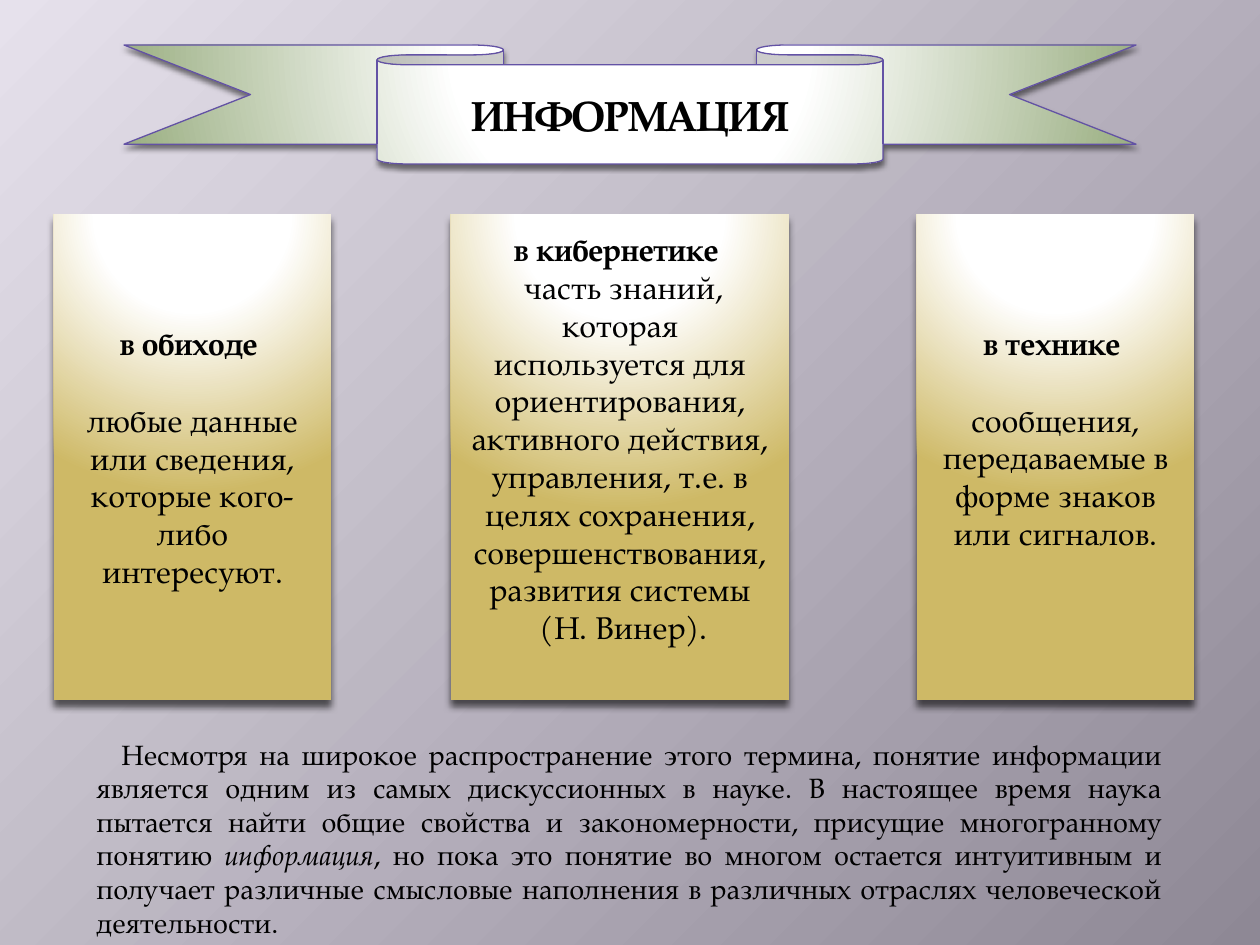
from lxml import etree
from pptx import Presentation
from pptx.dml.color import RGBColor
from pptx.enum.shapes import MSO_SHAPE
from pptx.enum.text import MSO_ANCHOR, PP_ALIGN
from pptx.oxml import parse_xml
from pptx.oxml.ns import nsdecls, qn
from pptx.util import Pt

RECT, RIBBON = MSO_SHAPE.RECTANGLE, MSO_SHAPE.DOWN_RIBBON
CENTER, JUSTIFY = PP_ALIGN.CENTER, PP_ALIGN.JUSTIFY
MIDDLE = MSO_ANCHOR.MIDDLE
PX = 914400 / 126
FONT = "TeX Gyre Pagella"
C = {"text": "000000", "white": "FFFFFF", "gold": "CEB966", "green": "9CB084",
     "line": "6352A5", "bg_light": "E6E1EC", "bg_dark": "8E8895"}


def px(*lengths):
    return [round(n * PX) for n in lengths]


def paint(fill, parent, stops, focus, shadow=None):
    fill.solid()
    gs = "".join(f'<a:gs pos="{pos * 1000}"><a:srgbClr val="{C[name]}"/></a:gs>'
                 for pos, name in stops)
    l, t, r, b = [n * 1000 for n in focus]
    solid = parent.find(qn("a:solidFill"))
    parent.replace(solid, parse_xml(
        f'<a:gradFill {nsdecls("a")} rotWithShape="1"><a:gsLst>{gs}</a:gsLst>'
        f'<a:path path="circle"><a:fillToRect l="{l}" t="{t}" r="{r}" b="{b}"/>'
        f'</a:path></a:gradFill>'))
    if shadow:
        alpha, blur, dist = shadow
        outer = etree.SubElement(parent.find(qn("a:effectLst")), qn("a:outerShdw"),
                                 blurRad=str(Pt(blur)), dist=str(Pt(dist)),
                                 dir="5400000", algn="ctr", rotWithShape="0")
        color = etree.SubElement(outer, qn("a:srgbClr"), val=C["text"])
        etree.SubElement(color, qn("a:alpha"), val=str(alpha * 1000))


prs = Presentation()
prs.slide_width, prs.slide_height = px(1260, 945)
s = prs.slides.add_slide(prs.slide_layouts[5])
bg = s.background.fill
bg.solid()
paint(bg, s._element.find(".//" + qn("p:bgPr")),
      [(0, "bg_light"), (100, "bg_dark")], (0, 0, 100, 100))

GLOW = (50, -80, 50, 180)
boxes = [
    (54, 277, 6, 22, ["в обиходе ",
                      "любые данные или сведения, которые кого-либо интересуют."]),
    (917, 277, 44, 22, ["в технике ",
                        "сообщения, передаваемые в форме знаков или сигналов."]),
    (451, 338, 44, 0, ["в кибернетике ",
                       " часть знаний, которая используется для ориентирования, "
                       "активного действия, управления, т.е. в целях сохранения, "
                       "совершенствования, развития системы",
                       " (Н. Винер)."]),
]
for left, width, bottom, gap, lines in boxes:
    sp = s.shapes.add_shape(RECT, *px(left, 214, width, 486))
    sp.shadow.inherit = False
    paint(sp.fill, sp._element.spPr,
          [(0, "white"), (35, "white"), (100, "gold")], GLOW, (60, 4, 4))
    sp.line.fill.background()
    tf = sp.text_frame
    tf.word_wrap = True
    tf.vertical_anchor = MIDDLE
    tf.margin_bottom = px(bottom)[0]
    for i, line in enumerate(lines):
        p = tf.paragraphs[0] if i == 0 else tf.add_paragraph()
        p.text = line
        p.alignment = CENTER
        p.font.name, p.font.size, p.font.bold = FONT, Pt(18), i == 0
        p.font.color.rgb = RGBColor.from_string(C["text"])
        if i == 0:
            p.space_after = Pt(gap)

note = s.shapes.add_textbox(*px(84, 731, 1091, 183))
tf = note.text_frame
tf.word_wrap = True
p = tf.paragraphs[0]
p.alignment = JUSTIFY
p._p.get_or_add_pPr().set("indent", str(px(25)[0]))
p.font.name, p.font.size = FONT, Pt(16)
p.font.color.rgb = RGBColor.from_string(C["text"])
for text, italic in [
    ("Несмотря на широкое распространение этого термина, понятие информации является "
     "одним из самых дискуссионных в науке. В настоящее время наука пытается найти "
     "общие свойства и закономерности, присущие многогранному понятию ", False),
    ("информация", True),
    (", но пока это понятие во многом остается интуитивным и получает различные "
     "смысловые наполнения в различных отраслях человеческой деятельности.", False),
]:
    r = p.add_run()
    r.text = text
    if italic:
        r.font.italic = True

ribbon = s.shapes.add_shape(RIBBON, *px(124, 45, 1012, 119))
ribbon.shadow.inherit = False
paint(ribbon.fill, ribbon._element.spPr,
      [(0, "white"), (35, "white"), (100, "green")], GLOW, (50, 3, 2))
ribbon.line.color.rgb = RGBColor.from_string(C["line"])
ribbon.line.width = Pt(0.75)

title = s.shapes.title
title.left, title.top, title.width, title.height = px(377, 65, 506, 99)
tf = title.text_frame
tf.vertical_anchor = MIDDLE
p = tf.paragraphs[0]
p.text = "ИНФОРМАЦИЯ"
p.alignment = CENTER
p.font.name, p.font.size, p.font.bold = FONT, Pt(24), True
p.font.color.rgb = RGBColor.from_string(C["text"])
s.shapes._spTree.append(title._element)

prs.save("out.pptx")
